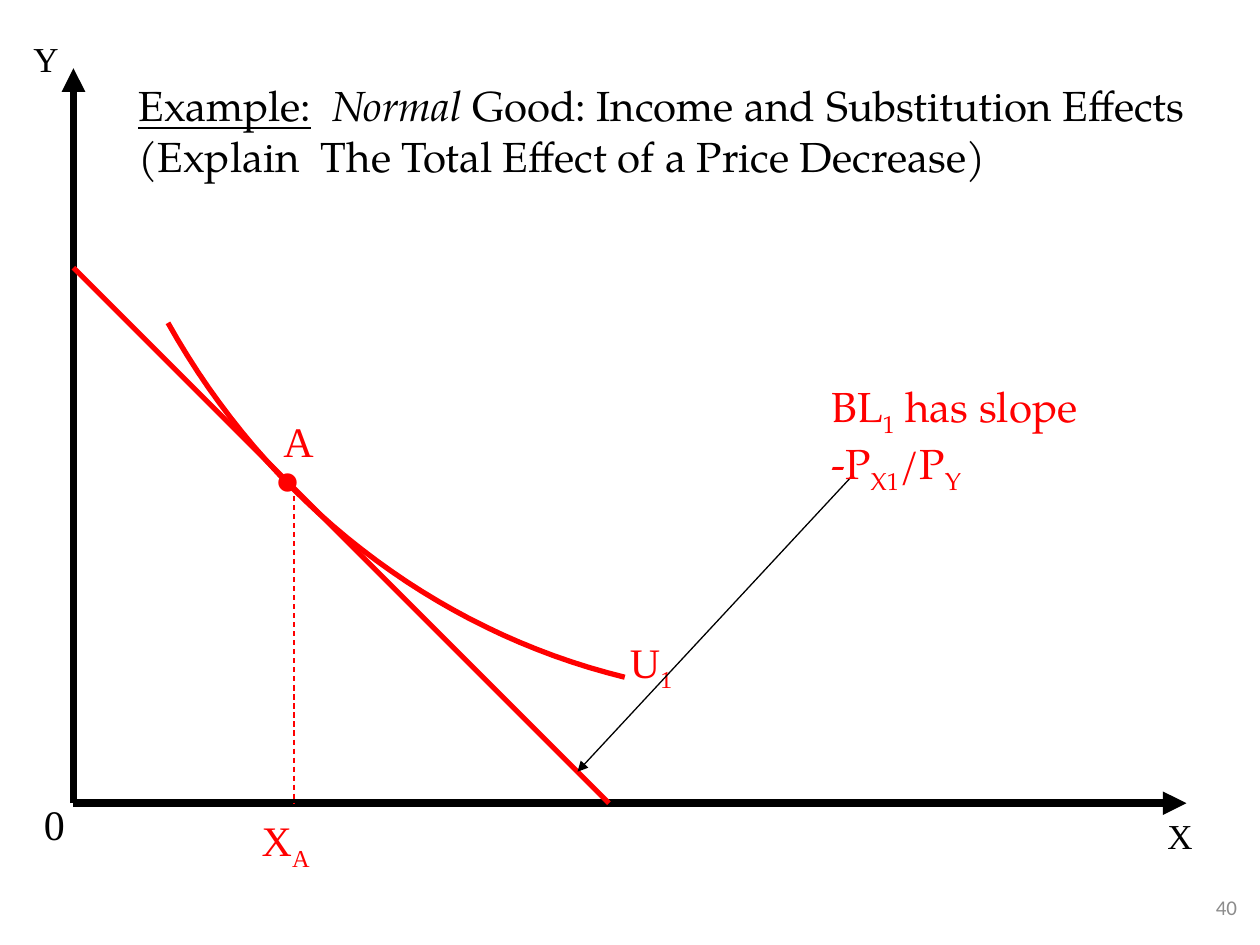
import pptx
import pptx.util
import pptx.dml.color
import pptx.enum.dml
import pptx.enum.shapes
import pptx.enum.text
import pptx.oxml
import pptx.oxml.ns

COLORS = {"black": "000000", "red": "FF0000", "gray": "8C8C8C"}
SERIF, TITLE_FONT, NUMBER_FONT = "Times New Roman", "TeX Gyre Pagella", "Calibri"
CELL = pptx.util.Inches(1) / 24  # the slide is a grid of 240 columns by 180 rows
SUBSCRIPT = {"baseline": "-25000"}


def cells(count):
    return pptx.util.Emu(round(count * CELL))


def rgb(color):
    return pptx.dml.color.RGBColor.from_string(COLORS[color])


def place(box, column, row):
    """Turn a cell of a box into slide lengths."""
    return cells(box[0] + column), cells(box[1] + row)


def style_line(shape, color, width):
    shape.line.color.rgb = rgb(color)
    shape.line.width = pptx.util.Pt(width)


def add_line(slide, box, start, end, color, width, arrow=False, dashed=False):
    line = slide.shapes.add_connector(
        pptx.enum.shapes.MSO_CONNECTOR.STRAIGHT, *place(box, *start), *place(box, *end))
    style_line(line, color, width)
    if dashed:
        line.line.dash_style = pptx.enum.dml.MSO_LINE.DASH
    properties = line._element.spPr
    if arrow:
        tail = pptx.oxml.parse_xml(
            f'<a:tailEnd {pptx.oxml.ns.nsdecls("a")} type="triangle"/>')
        line.line._get_or_add_ln().append(tail)
    properties.append(pptx.oxml.parse_xml(
        f'<a:effectLst {pptx.oxml.ns.nsdecls("a")}/>'))


def add_text(slide, box, area, paragraphs, size, color, font=SERIF, wrap=False,
             align=pptx.enum.text.PP_ALIGN.LEFT,
             anchor=pptx.enum.text.MSO_ANCHOR.TOP):
    """Write paragraphs of (text, format) runs in an area of the box."""
    column, row, width, height = area
    shape = slide.shapes.add_textbox(
        *place(box, column, row), cells(width), cells(height))
    frame = shape.text_frame
    frame.word_wrap = wrap
    frame.vertical_anchor = anchor
    for index, runs in enumerate(paragraphs):
        paragraph = frame.paragraphs[0] if index == 0 else frame.add_paragraph()
        paragraph.alignment = align
        for text, changes in runs:
            run = paragraph.add_run()
            run.text = text
            run.font.color.rgb = rgb(color)
            values = {"name": font, "size": pptx.util.Pt(size), **changes}
            baseline = values.pop("baseline", None)
            for name, value in values.items():
                setattr(run.font, name, value)
            if baseline:
                run._r.get_or_add_rPr().set("baseline", baseline)


def add_curve(slide, box, controls, color, width, steps=32):
    """Draw a cubic Bezier curve through evenly spaced parameters."""
    points = []
    for step in range(steps + 1):
        t = step / steps
        weights = ((1 - t) ** 3, 3 * t * (1 - t) ** 2, 3 * t ** 2 * (1 - t), t ** 3)
        column, row = (sum(weight * value for weight, value in zip(weights, axis))
                       for axis in zip(*controls))
        points.append(place(box, column, row))
    builder = slide.shapes.build_freeform(*points[0])
    builder.add_line_segments(points[1:], close=False)
    curve = builder.convert_to_shape()
    curve.fill.background()
    curve.shadow.inherit = False
    style_line(curve, color, width)


def add_axes(slide, box):
    width, height = box[2:]
    origin = (0, height)
    for end in ((width, height), (0, 0)):
        add_line(slide, box, origin, end, "black", 4.5, arrow=True)
    add_text(slide, box, (-8, height - 2, 9, 12), [[("0", {})]], 24, "black")
    add_text(slide, box, (-10, -7, 9.6, 10.4), [[("Y", {})]], 20, "black")
    add_text(slide, box, (width - 6, height + 1, 9.6, 10.4), [[("X", {})]], 20, "black")


def add_consumer_choice(slide, box):
    """Draw the budget line, the indifference curve and their tangency."""
    height = box[3]
    add_line(slide, box, (0, 38), (102, height), "red", 3)
    add_curve(slide, box, ((105, 116), (68.3, 107), (37, 82.5), (18, 48.5)), "red", 3)
    add_text(slide, box, (36, 68, 9.8, 20), [[("•", {})]], 44, "red")
    add_line(slide, box, (42, 78), (42, height), "red", 0.75, dashed=True)
    labels = [
        ((37.6, 65, 10.6, 12), [("A", {})]),
        ((103.6, 107, 13.2, 12), [("U", {}), ("1", SUBSCRIPT)]),
        ((33.5, height + 1, 14.4, 12), [("X", {}), ("A", SUBSCRIPT)]),
    ]
    for area, runs in labels:
        add_text(slide, box, area, [runs], 24, "red")


def add_slope_note(slide, box):
    add_line(slide, box, (148, 78), (96, 134), "black", 0.75, arrow=True)
    add_text(slide, box, (142, 58.3, 53.8, 21.6), [
        [("BL", {}), ("1", SUBSCRIPT), (" has slope", {})],
        [("-P", {}), ("X1", SUBSCRIPT), ("/P", {}), ("Y", SUBSCRIPT)],
    ], 24, "red", TITLE_FONT)


def add_title(slide, box):
    add_text(slide, box, (0, 0, *box[2:]), [
        [("Example:", {"underline": True}), ("  ", {}), ("Normal", {"italic": True}),
         (" Good: Income and Substitution Effects", {})],
        [("(Explain  The Total Effect of a Price Decrease)", {})],
    ], 24, "black", TITLE_FONT, wrap=True)


def add_slide_number(slide, box):
    add_text(slide, box, (0, 0, *box[2:]), [[("40", {})]], 12, "gray", NUMBER_FONT,
             wrap=True, align=pptx.enum.text.PP_ALIGN.RIGHT,
             anchor=pptx.enum.text.MSO_ANCHOR.MIDDLE)


def main():
    presentation = pptx.Presentation()
    presentation.slide_width, presentation.slide_height = cells(240), cells(180)
    slide = presentation.slides.add_slide(presentation.slide_layouts[6])
    plane = (14, 13, 212, 140)
    add_slide_number(slide, (220, 168, 18, 9.6))
    add_axes(slide, plane)
    add_consumer_choice(slide, plane)
    add_slope_note(slide, plane)
    add_title(slide, (24, 14, 210, 31.4))
    presentation.save("out.pptx")


if __name__ == "__main__":
    main()
